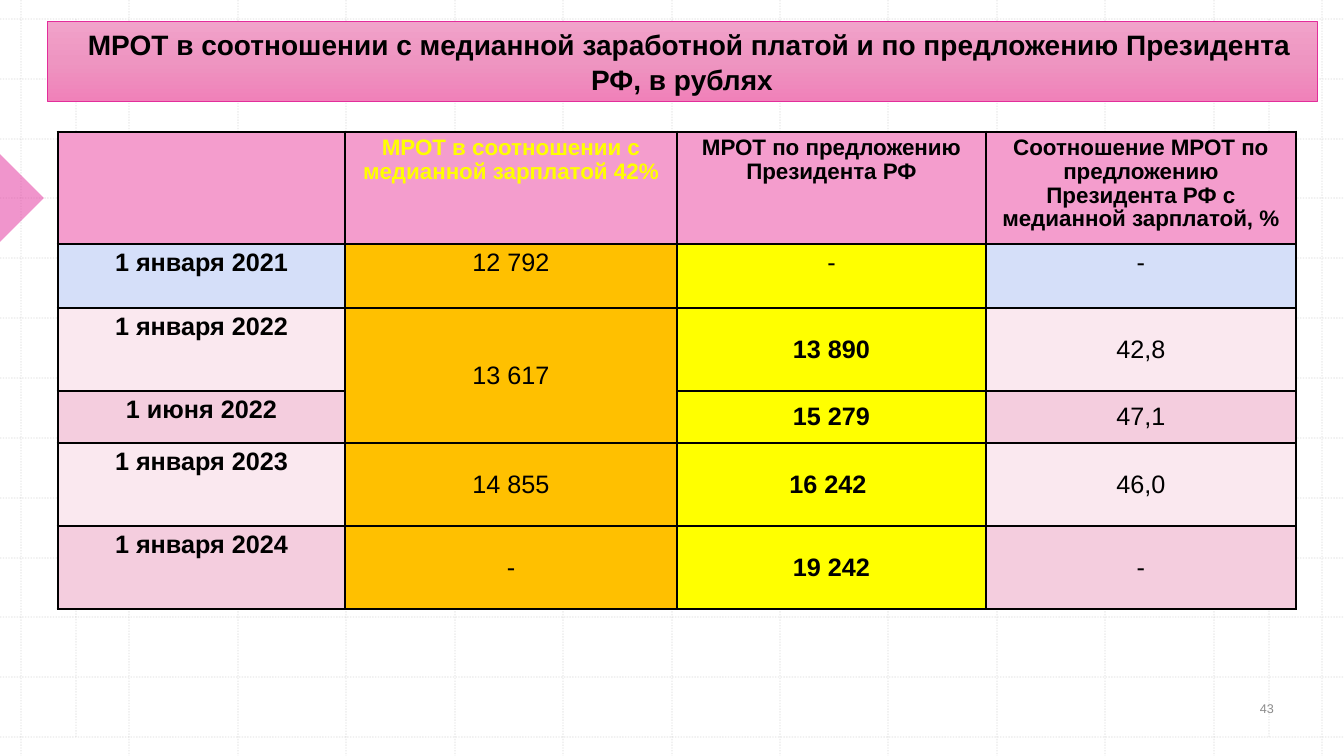
"""Build the slide comparing the minimum wage with the median salary."""
import copy
import dataclasses

import lxml.etree
import pptx
import pptx.dml.color
import pptx.enum.dml
import pptx.enum.shapes
import pptx.enum.text
import pptx.oxml.ns
import pptx.util

RGB = pptx.dml.color.RGBColor
ANCHOR = pptx.enum.text.MSO_ANCHOR
SHAPE = pptx.enum.shapes.MSO_SHAPE
qn = pptx.oxml.ns.qn

PX_PER_INCH = 100.8
SLIDE_WIDTH, SLIDE_HEIGHT = 1344, 756
FONT = "Arial"

BLACK = RGB(0x00, 0x00, 0x00)
YELLOW = RGB(0xFF, 0xFF, 0x00)
ORANGE = RGB(0xFF, 0xC0, 0x00)
HEADER_PINK = RGB(0xF4, 0x9D, 0xCD)
LIGHT_BLUE = RGB(0xD5, 0xDF, 0xF9)
PALE_PINK = RGB(0xFA, 0xE8, 0xEF)
SOFT_PINK = RGB(0xF4, 0xCD, 0xDE)
ACCENT = RGB(0xE3, 0x2D, 0x9B)
GRID_GREY = RGB(0xBC, 0xBC, 0xBC)
NUMBER_GREY = RGB(0x8C, 0x8C, 0x8C)
TITLE_GRADIENT = (RGB(0xF1, 0xA3, 0xCA), RGB(0xEE, 0x95, 0xC1), RGB(0xF0, 0x81, 0xB9))


@dataclasses.dataclass(frozen=True)
class Box:
    left: int
    top: int
    width: int
    height: int


@dataclasses.dataclass(frozen=True)
class GridLine:
    x1: int
    y1: int
    x2: int
    y2: int


@dataclasses.dataclass(frozen=True)
class WageRow:
    date: str
    median_wage: str
    proposed_wage: str
    ratio: str
    height: int
    fill: RGB
    anchor: ANCHOR = ANCHOR.MIDDLE


TITLE = "МРОТ в соотношении с медианной заработной платой и по предложению Президента РФ, в рублях"
TITLE_BOX = Box(47, 21, 1270, 80)
POINTER_BOX = Box(-31, 167, 62, 62)
NUMBER_BOX = Box(1213, 685, 108, 46)
TABLE_BOX = Box(58, 132, 1238, 476)
COLUMN_WIDTHS = (287, 332, 309, 310)
MERGED_ROWS = (2, 3)
WAGE_ROWS = (
    WageRow("", "МРОТ в соотношении с медианной зарплатой 42%",
            "МРОТ по предложению Президента РФ",
            "Соотношение МРОТ по предложению Президента РФ с медианной зарплатой, %",
            111, HEADER_PINK, ANCHOR.TOP),
    WageRow("1 января 2021", "12 792", "-", "-", 64, LIGHT_BLUE, ANCHOR.TOP),
    WageRow("1 января 2022", "13 617", "13 890", "42,8", 83, PALE_PINK),
    WageRow("1 июня 2022", "", "15 279", "47,1", 52, SOFT_PINK),
    WageRow("1 января 2023", "14 855", "16 242 ", "46,0", 83, PALE_PINK),
    WageRow("1 января 2024", "-", "19 242", "-", 83, SOFT_PINK),
)
GRID_LINES = (
    *(GridLine(x, 0, x, SLIDE_HEIGHT) for x in (round(21 + 1301 * i / 12) for i in range(13))),
    *(GridLine(0, y, SLIDE_WIDTH, y) for y in (round(19 + 718 * i / 12) for i in range(13))),
    *(GridLine(x, 19, x, 737) for x in (76, 1269)),
)


def px(length: int) -> pptx.util.Emu:
    """Convert pixels to EMU."""
    return pptx.util.Emu(round(length * 914400 / PX_PER_INCH))


def place(box: Box) -> tuple:
    """Return the position and size of a box in EMU."""
    return tuple(px(length) for length in dataclasses.astuple(box))


def set_opacity(fill_parent, percent: int) -> None:
    """Make the solid colour inside an element partly transparent."""
    color = next(fill_parent.iter(qn("a:srgbClr")))
    lxml.etree.SubElement(color, qn("a:alpha"), val=str(percent * 1000))


def write_text(frame, text: str, *, size: int, color: RGB = BLACK, bold: bool = False,
               spacing: float = 1.0, first_indent: int = 0) -> None:
    """Write one centred paragraph into a text frame."""
    frame.word_wrap = True
    paragraph = frame.paragraphs[0]
    paragraph.alignment = pptx.enum.text.PP_ALIGN.CENTER
    paragraph.line_spacing = spacing
    if first_indent:
        paragraph._p.get_or_add_pPr().set("indent", str(px(first_indent)))
    run = paragraph.add_run()
    run.text = text
    run.font.name = FONT
    run.font.size = pptx.util.Pt(size)
    run.font.bold = bold
    run.font.color.rgb = color


def draw_grid_line(slide, grid_line: GridLine) -> None:
    """Draw one faint dotted background line."""
    ends = (px(end) for end in dataclasses.astuple(grid_line))
    connector = slide.shapes.add_connector(pptx.enum.shapes.MSO_CONNECTOR.STRAIGHT, *ends)
    connector.line.color.rgb = GRID_GREY
    connector.line.width = pptx.util.Pt(1)
    connector.line.dash_style = pptx.enum.dml.MSO_LINE.ROUND_DOT
    properties = connector._element.spPr
    set_opacity(properties, 30)
    lxml.etree.SubElement(properties, qn("a:effectLst"))


def draw_pointer(slide) -> None:
    """Draw the translucent pointer on the left edge."""
    pointer = slide.shapes.add_shape(SHAPE.RIGHT_TRIANGLE, *place(POINTER_BOX))
    pointer.shadow.inherit = False
    pointer.rotation = 225
    pointer.fill.solid()
    pointer.fill.fore_color.rgb = ACCENT
    pointer.line.fill.background()
    set_opacity(pointer._element.spPr, 50)


def draw_title(slide) -> None:
    """Draw the gradient title banner."""
    banner = slide.shapes.add_shape(SHAPE.RECTANGLE, *place(TITLE_BOX))
    banner.shadow.inherit = False
    banner.fill.gradient()
    banner.fill.gradient_angle = 270
    stop_list = next(banner._element.iter(qn("a:gsLst")))
    stop_list.insert(1, copy.deepcopy(stop_list[0]))
    for index, (stop, color) in enumerate(zip(banner.fill.gradient_stops, TITLE_GRADIENT)):
        stop.color.rgb = color
        stop.position = index / 2
    banner.line.color.rgb = ACCENT
    banner.line.width = pptx.util.Pt(0.5)
    banner.text_frame.vertical_anchor = ANCHOR.MIDDLE
    write_text(banner.text_frame, TITLE, size=20, bold=True, spacing=1.05, first_indent=15)


def set_borders(cell, outer_sides: dict[str, bool]) -> None:
    """Give a cell black borders, thicker on the outer sides."""
    properties = cell._tc.get_or_add_tcPr()
    for side, is_outer in outer_sides.items():
        width = pptx.util.Pt(2.25 if is_outer else 1)
        border = lxml.etree.SubElement(properties, qn(f"a:ln{side}"), w=str(width))
        solid = lxml.etree.SubElement(border, qn("a:solidFill"))
        lxml.etree.SubElement(solid, qn("a:srgbClr"), val=str(BLACK))


def draw_cell(cell, wage_row: WageRow, row: int, column: int) -> None:
    """Fill, frame and write one table cell."""
    is_header = row == 0
    set_borders(cell, {"L": column == 0, "R": column == len(COLUMN_WIDTHS) - 1,
                       "T": is_header, "B": row == len(WAGE_ROWS) - 1})
    column_fill = {1: ORANGE, 2: YELLOW}.get(column, wage_row.fill)
    cell.fill.solid()
    cell.fill.fore_color.rgb = wage_row.fill if is_header else column_fill
    cell.margin_left = cell.margin_right = px(13)
    cell.margin_top = cell.margin_bottom = px(5)
    cell.vertical_anchor = ANCHOR.TOP if column == 0 else wage_row.anchor
    text = (wage_row.date, wage_row.median_wage, wage_row.proposed_wage, wage_row.ratio)[column]
    if text:
        write_text(cell.text_frame, text, size=16 if is_header else 18,
                   color=YELLOW if is_header and column == 1 else BLACK,
                   bold=is_header or column == 0 or (column == 2 and text != "-"),
                   spacing=0.95 if is_header else 1.0)


def draw_table(slide) -> None:
    """Draw the wage table."""
    table = slide.shapes.add_table(len(WAGE_ROWS), len(COLUMN_WIDTHS), *place(TABLE_BOX)).table
    table.first_row = table.horz_banding = False
    for column, width in enumerate(COLUMN_WIDTHS):
        table.columns[column].width = px(width)
    for row, wage_row in enumerate(WAGE_ROWS):
        table.rows[row].height = px(wage_row.height)
        for column in range(len(COLUMN_WIDTHS)):
            draw_cell(table.cell(row, column), wage_row, row, column)
    first, last = MERGED_ROWS
    table.cell(first, 1).merge(table.cell(last, 1))


def main() -> None:
    """Build and save the presentation."""
    presentation = pptx.Presentation()
    presentation.slide_width, presentation.slide_height = px(SLIDE_WIDTH), px(SLIDE_HEIGHT)
    slide = presentation.slides.add_slide(presentation.slide_layouts[6])
    for grid_line in GRID_LINES:
        draw_grid_line(slide, grid_line)
    draw_pointer(slide)
    page_number = slide.shapes.add_textbox(*place(NUMBER_BOX)).text_frame
    page_number.vertical_anchor = ANCHOR.MIDDLE
    write_text(page_number, "43", size=9, color=NUMBER_GREY)
    draw_table(slide)
    draw_title(slide)
    presentation.save("out.pptx")


if __name__ == "__main__":
    main()
